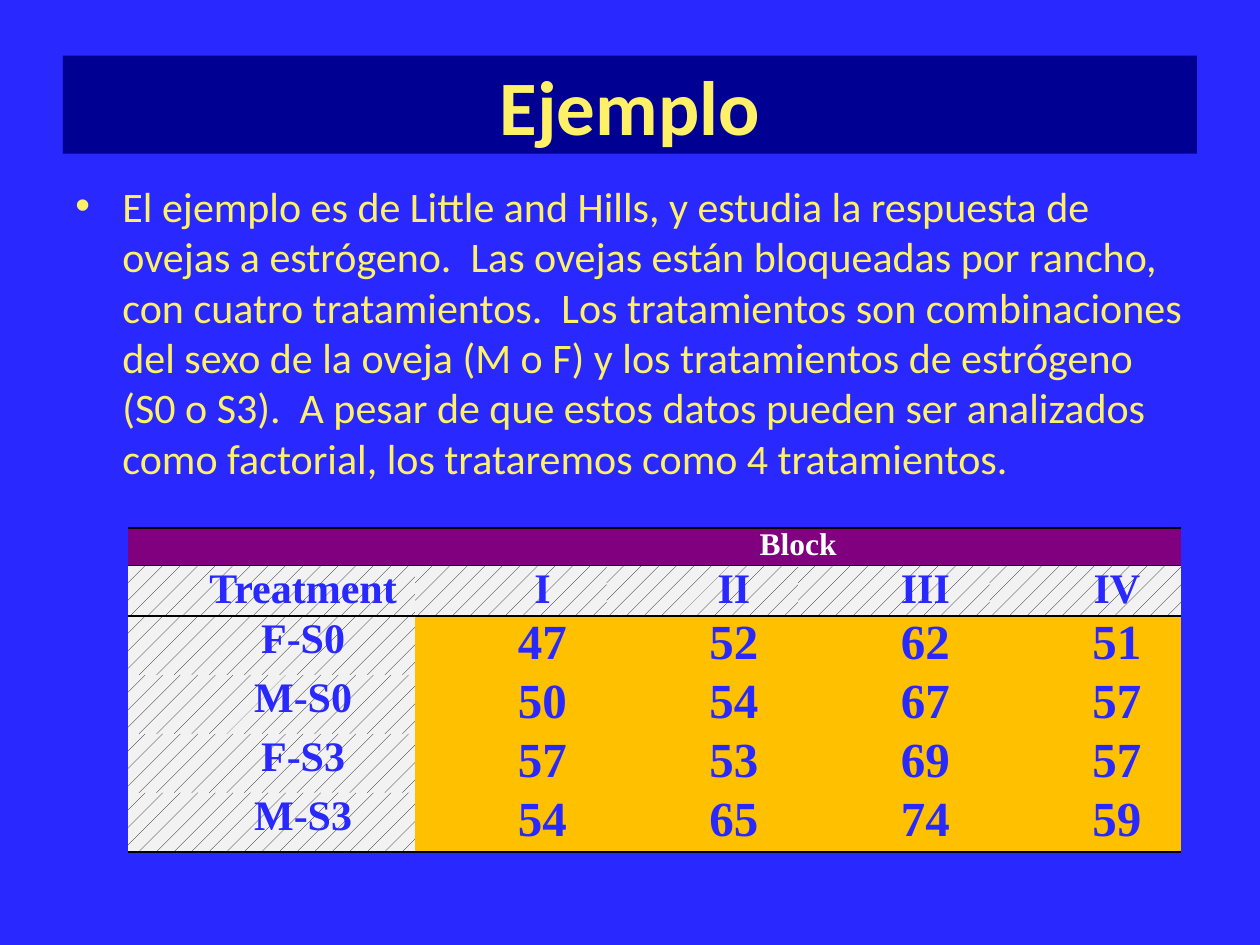
from dataclasses import dataclass

from lxml.etree import SubElement
from pptx import Presentation
from pptx.dml.color import RGBColor
from pptx.enum.dml import MSO_PATTERN
from pptx.enum.shapes import MSO_SHAPE
from pptx.enum.text import MSO_ANCHOR, PP_ALIGN
from pptx.oxml.ns import qn
from pptx.util import Cm, Pt

BLUE = RGBColor(0x28, 0x28, 0xFF)
NAVY = RGBColor(0x00, 0x00, 0x93)
YELLOW = RGBColor(0xFF, 0xF1, 0x67)
PURPLE = RGBColor(0x80, 0x00, 0x80)
ORANGE = RGBColor(0xFF, 0xC0, 0x00)
GREY = RGBColor(0xF2, 0xF2, 0xF2)
WHITE = RGBColor(0xFF, 0xFF, 0xFF)
BLACK = RGBColor(0x00, 0x00, 0x00)

NO_STYLE = "{2D5ABB26-0587-4C30-8999-92F81FD0307C}"
LEFT, WIDTH = Cm(1.27), Cm(22.86)
BODY = (
    "El ejemplo es de Little and Hills, y estudia la respuesta de ovejas a estrógeno.  "
    "Las ovejas están bloqueadas por rancho, con cuatro tratamientos.  "
    "Los tratamientos son combinaciones del sexo de la oveja (M o F) y los tratamientos "
    "de estrógeno  (S0 o S3).  A pesar de que estos datos pueden ser analizados como "
    "factorial, los trataremos como 4 tratamientos."
)
ROWS = [
    ("", "Block", "", "", ""),
    ("Treatment", "I", "II", "III", "IV"),
    ("F-S0", "47", "52", "62", "51"),
    ("M-S0", "50", "54", "67", "57"),
    ("F-S3", "57", "53", "69", "57"),
    ("M-S3", "54", "65", "74", "59"),
]
COLUMN_WIDTHS = [Cm(5.79)] + [Cm(3.86)] * 4
ROW_HEIGHTS = [Cm(0.71), Cm(0.95)] + [Cm(1.09)] * 4


@dataclass(frozen=True)
class CellStyle:
    size: int
    color: RGBColor
    fill: RGBColor | None  # None means the grey pattern
    indent: Cm = Cm(1.27)
    spacing: int = 0


BLOCK = CellStyle(18, WHITE, PURPLE, indent=Cm(0))
HEADING = CellStyle(24, BLUE, None, spacing=3)
TREATMENT = CellStyle(24, BLUE, None)
VALUE = CellStyle(28, BLUE, ORANGE)

# Border widths in points by row and edge
BORDERS = {0: {"lnT": 1.5, "lnB": 1}, 1: {"lnT": 1}, 5: {"lnB": 1.5}}


def style_for(row: int, column: int) -> CellStyle:
    if row == 0:
        return BLOCK
    if row == 1:
        return HEADING
    return VALUE if column else TREATMENT


def format_text(paragraph, font_name: str, size: int, color: RGBColor, bold: bool) -> None:
    for run in paragraph.runs:
        run.font.name = font_name
        run.font.size = Pt(size)
        run.font.bold = bold
        run.font.color.rgb = color


def set_indent(paragraph, margin: int, first_line: int) -> None:
    properties = paragraph._p.get_or_add_pPr()
    properties.set("marL", str(margin))
    properties.set("indent", str(first_line))


def add_border(cell, edge: str, width: float) -> None:
    line = SubElement(cell._tc.get_or_add_tcPr(), qn(f"a:{edge}"), w=str(Pt(width)))
    fill = SubElement(line, qn("a:solidFill"))
    SubElement(fill, qn("a:srgbClr"), val=str(BLACK))


def fill_cell(cell, text: str, style: CellStyle) -> None:
    cell.margin_left = cell.margin_right = Cm(0.18)
    cell.margin_top = cell.margin_bottom = 0
    if style.fill is None:
        cell.fill.patterned()
        cell.fill.pattern = MSO_PATTERN.PERCENT_5
        cell.fill.fore_color.rgb = BLACK
        cell.fill.back_color.rgb = GREY
    else:
        cell.fill.solid()
        cell.fill.fore_color.rgb = style.fill
    paragraph = cell.text_frame.paragraphs[0]
    if not text:
        # Keeps an empty cell from stretching its row
        SubElement(paragraph._p, qn("a:endParaRPr"), sz="1200")
        return
    paragraph.text = text
    paragraph.alignment = PP_ALIGN.CENTER
    paragraph.space_before = Pt(6 if style is BLOCK else style.spacing)
    paragraph.space_after = Pt(style.spacing)
    set_indent(paragraph, 0, style.indent)
    format_text(paragraph, "Times New Roman", style.size, style.color, True)


def add_title(slide) -> None:
    shape = slide.shapes.add_shape(MSO_SHAPE.RECTANGLE, LEFT, Cm(1.12), WIDTH, Cm(1.98))
    shape.shadow.inherit = False
    shape.fill.solid()
    shape.fill.fore_color.rgb = NAVY
    shape.line.fill.background()
    shape.text_frame.text = "Ejemplo"
    shape.text_frame.vertical_anchor = MSO_ANCHOR.MIDDLE
    paragraph = shape.text_frame.paragraphs[0]
    paragraph.alignment = PP_ALIGN.CENTER
    format_text(paragraph, "Calibri", 44, YELLOW, True)


def add_body(slide) -> None:
    text_frame = slide.shapes.add_textbox(LEFT, Cm(3.51), WIDTH, Cm(6.93)).text_frame
    text_frame.word_wrap = True
    text_frame.text = BODY
    paragraph = text_frame.paragraphs[0]
    paragraph.space_before = Pt(4.8)
    set_indent(paragraph, Cm(0.95), -Cm(0.95))
    properties = paragraph._p.get_or_add_pPr()
    SubElement(properties, qn("a:buFont"), typeface="Arial")
    SubElement(properties, qn("a:buChar"), char="•")
    format_text(paragraph, "Calibri", 24, YELLOW, False)


def add_data_table(slide) -> None:
    frame = slide.shapes.add_table(
        len(ROWS), len(COLUMN_WIDTHS), Cm(2.58), Cm(10.64),
        sum(COLUMN_WIDTHS), sum(ROW_HEIGHTS),
    )
    table = frame.table
    table.first_row = table.horz_banding = False
    table._tbl.tblPr.find(qn("a:tableStyleId")).text = NO_STYLE
    for column, width in zip(table.columns, COLUMN_WIDTHS):
        column.width = width
    for row, height in zip(table.rows, ROW_HEIGHTS):
        row.height = height
    table.cell(0, 1).merge(table.cell(0, 4))
    for row_index, texts in enumerate(ROWS):
        for column_index, text in enumerate(texts):
            cell = table.cell(row_index, column_index)
            for edge, width in BORDERS.get(row_index, {}).items():
                add_border(cell, edge, width)
            fill_cell(cell, text, style_for(row_index, column_index))


def main() -> None:
    presentation = Presentation()
    presentation.slide_width, presentation.slide_height = Cm(25.4), Cm(19.05)
    slide = presentation.slides.add_slide(presentation.slide_layouts[6])
    slide.background.fill.solid()
    slide.background.fill.fore_color.rgb = BLUE
    add_title(slide)
    add_body(slide)
    add_data_table(slide)
    presentation.save("out.pptx")


if __name__ == "__main__":
    main()
